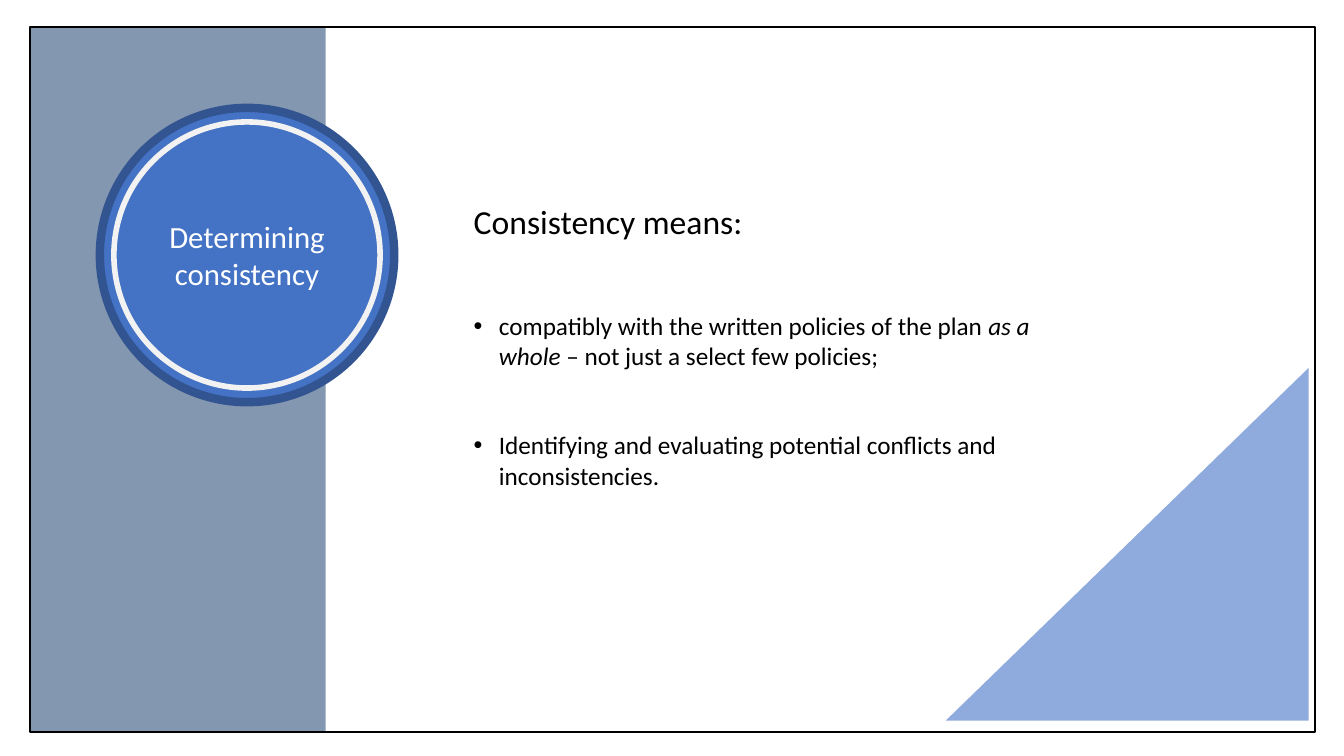
from lxml import etree
from pptx import Presentation
from pptx.dml.color import RGBColor
from pptx.enum.shapes import MSO_SHAPE
from pptx.enum.text import MSO_ANCHOR, MSO_AUTO_SIZE, PP_ALIGN
from pptx.oxml.ns import qn
from pptx.util import Inches, Pt


def color(value):
    return RGBColor.from_string(value)


def place(item, left, top, width, height):
    bounds = {"left": left, "top": top, "width": width, "height": height}
    for name, value in bounds.items():
        setattr(item, name, Inches(value))


def add_shape(page, kind, bounds, fill=None, line=None, line_width=0):
    shape = page.shapes.add_shape(kind, *map(Inches, bounds))
    shape.shadow.inherit = False
    if fill:
        shape.fill.solid()
        shape.fill.fore_color.rgb = color(fill)
    else:
        shape.fill.background()
    if line:
        shape.line.color.rgb = color(line)
        shape.line.width = Pt(line_width)
    else:
        shape.line.fill.background()
    return shape


def format_frame(frame):
    settings = {
        "word_wrap": True,
        "auto_size": MSO_AUTO_SIZE.NONE,
        "vertical_anchor": MSO_ANCHOR.MIDDLE,
    }
    for name, value in settings.items():
        setattr(frame, name, value)


def add_bullet(para, indent):
    properties = para._p.get_or_add_pPr()
    properties.set("marL", str(Inches(indent)))
    properties.set("indent", str(Inches(-indent)))
    etree.SubElement(properties, qn("a:buFont")).set("typeface", "Arial")
    etree.SubElement(properties, qn("a:buChar")).set("char", "•")


def write(para, spans, size, text_color, space=0, align=PP_ALIGN.LEFT):
    layout = {"alignment": align, "line_spacing": 1.0, "space_before": Pt(space)}
    for name, value in layout.items():
        setattr(para, name, value)
    for text, italic in spans:
        span = para.add_run()
        span.text = text
        styles = {"name": "Calibri", "size": Pt(size), "bold": False, "italic": italic}
        for name, value in styles.items():
            setattr(span.font, name, value)
        span.font.color.rgb = color(text_color)


def set_title(page, text, bounds):
    title = page.shapes.title
    place(title, *bounds)
    format_frame(title.text_frame)
    write(title.text_frame.paragraphs[0], [(text, False)], 22, "FFFFFF",
          align=PP_ALIGN.CENTER)
    # Bring the title in front of its circle
    page.shapes._spTree.append(title._element)


def add_points(page, bounds, heading, points):
    box = page.shapes.add_textbox(*map(Inches, bounds))
    frame = box.text_frame
    format_frame(frame)
    write(frame.paragraphs[0], [(heading, False)], 24, "000000")
    for spans, space in points:
        para = frame.add_paragraph()
        add_bullet(para, 0.25)
        write(para, spans, 18, "000000", space)


def main():
    deck = Presentation()
    deck.slide_width, deck.slide_height = Inches(13.33), Inches(7.5)
    page = deck.slides.add_slide(deck.slide_layouts[5])

    # Corner triangle and side band
    triangle = add_shape(page, MSO_SHAPE.RIGHT_TRIANGLE, (9.38, 3.65, 3.6, 3.5), "8FAADC")
    triangle._element.spPr.xfrm.set("flipH", "1")
    add_shape(page, MSO_SHAPE.RECTANGLE, (0.29, 0.27, 2.94, 6.99), "8497B0")

    # Title circle with inner ring
    add_shape(page, MSO_SHAPE.OVAL, (0.99, 1.07, 2.92, 2.92), "4472C4", "325491", 6)
    set_title(page, "Determining consistency", (1.42, 1.5, 2.06, 2.06))
    add_shape(page, MSO_SHAPE.OVAL, (1.13, 1.21, 2.64, 2.64), line="F2F2F2", line_width=4)

    # Slide frame
    add_shape(page, MSO_SHAPE.RECTANGLE, (0.3, 0.27, 12.74, 6.99),
              line="000000", line_width=1.5)

    # Definition and its points
    compatibility = [
        ("compatibly with the written policies of the plan ", False),
        ("as a whole ", True),
        ("– not just a select few policies;", False),
    ]
    conflicts = [
        ("Identifying and evaluating potential conflicts and inconsistencies.", False),
    ]
    add_points(page, (4.6, 1.06, 6.28, 4.74), "Consistency means:",
               [(compatibility, 49), (conflicts, 42)])

    deck.save("out.pptx")


if __name__ == "__main__":
    main()
